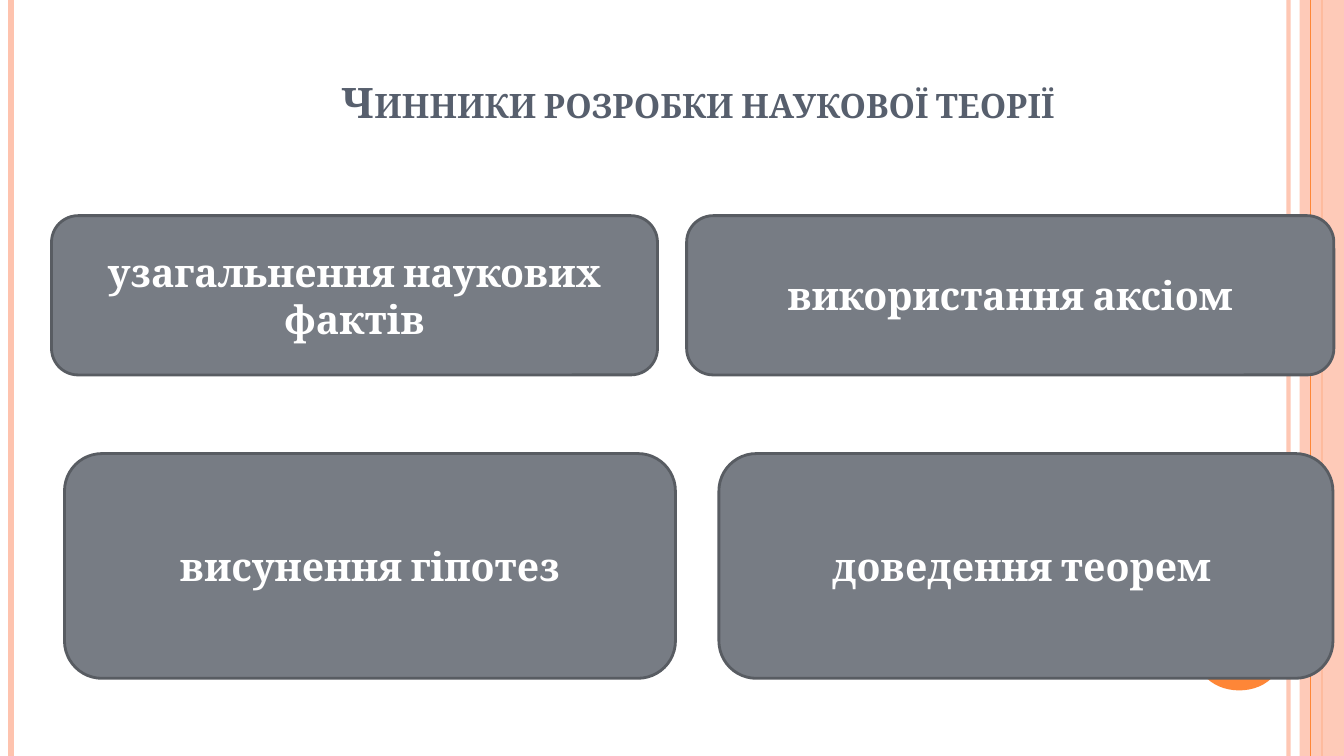
from pptx import Presentation
from pptx.dml.color import RGBColor
from pptx.enum.shapes import MSO_CONNECTOR, MSO_SHAPE
from pptx.enum.text import MSO_ANCHOR, MSO_AUTO_SIZE, PP_ALIGN
from pptx.oxml.ns import qn
from pptx.util import Inches, Pt
from lxml.etree import SubElement

W, H = Inches(13.33), Inches(7.5)
COLORS = {"peach": "FEC3AE", "orange": "FE8637", "slate": "575F6D",
          "box": "777C84", "edge": "585C62", "white": "FFFFFF"}
STRIPES = [(95.87, "peach", 3, 93), (0.83, "peach", 4.5, 100), (98.35, "orange", 1.5, 100)]
ROWS = [
    (28.53, 21.07, [(3.83, 45.09, "узагальнення наукових фактів"),
                    (51.09, 48.16, "використання аксіом")]),
    (60, 29.73, [(4.8, 45.46, "висунення гіпотез"),
                 (53.49, 45.69, "доведення теорем ")]),
]
FONT = {"name": "Cambria", "bold": True}


def rgb(name):
    return RGBColor.from_string(COLORS[name])


def area(left, top, width, height):
    return [round(size * share / 100)
            for size, share in ((W, left), (H, top), (W, width), (H, height))]


def paint(fill, color, opacity=100):
    fill.solid()
    fill.fore_color.rgb = rgb(color)
    if opacity < 100:
        clr = fill._xPr.find(qn("a:solidFill"))[0]
        SubElement(clr, qn("a:alpha")).set("val", str(opacity * 1000))


def add_stripe(s, left, color, width, opacity):
    x = round(W * left / 100)
    line = s.shapes.add_connector(MSO_CONNECTOR.STRAIGHT, x, 0, x, H)
    line.line.width = Pt(width)
    paint(line.line.fill, color, opacity)
    SubElement(line._element.spPr, qn("a:effectLst"))


def add_plain(s, kind, box, color, opacity=100):
    sp = s.shapes.add_shape(kind, *area(*box))
    sp.shadow.inherit = False
    paint(sp.fill, color, opacity)
    sp.line.fill.background()
    return sp


def write(sp, text, size, color, anchor):
    tf = sp.text_frame
    for key, value in {"word_wrap": True, "auto_size": MSO_AUTO_SIZE.NONE,
                       "vertical_anchor": anchor}.items():
        setattr(tf, key, value)
    p = tf.paragraphs[0]
    p.alignment = PP_ALIGN.CENTER
    r = p.add_run()
    r.text = text
    for key, value in {**FONT, "size": Pt(size)}.items():
        setattr(r.font, key, value)
    r.font.color.rgb = rgb(color)
    return r


def add_title(s, text):
    sp = s.shapes.title
    for key, value in zip(("left", "top", "width", "height"), area(4.8, 3.33, 94.3, 14.13)):
        setattr(sp, key, value)
    r = write(sp, text, 30, "slate", MSO_ANCHOR.BOTTOM)
    r.font._element.set("cap", "small")
    s.shapes._spTree.append(sp._element)


def add_factor(s, box, text):
    sp = add_plain(s, MSO_SHAPE.ROUNDED_RECTANGLE, box, "box")
    paint(sp.line.fill, "edge")
    sp.line.width = Pt(2)
    write(sp, text, 28, "white", MSO_ANCHOR.MIDDLE)


def main():
    prs = Presentation()
    prs.slide_width, prs.slide_height = W, H
    s = prs.slides.add_slide(prs.slide_layouts[5])
    for stripe in STRIPES:
        add_stripe(s, *stripe)
    add_plain(s, MSO_SHAPE.RECTANGLE, (96.7, 0, 3.3, 100), "peach", 87)
    add_stripe(s, 97.52, "orange", 0.75, 100)
    add_plain(s, MSO_SHAPE.OVAL, (89.2, 83.33, 6, 8), "orange")
    add_title(s, "Чинники розробки наукової теорії")
    for top, height, factors in ROWS:
        for left, width, text in factors:
            add_factor(s, (left, top, width, height), text)
    prs.save("out.pptx")


if __name__ == "__main__":
    main()
